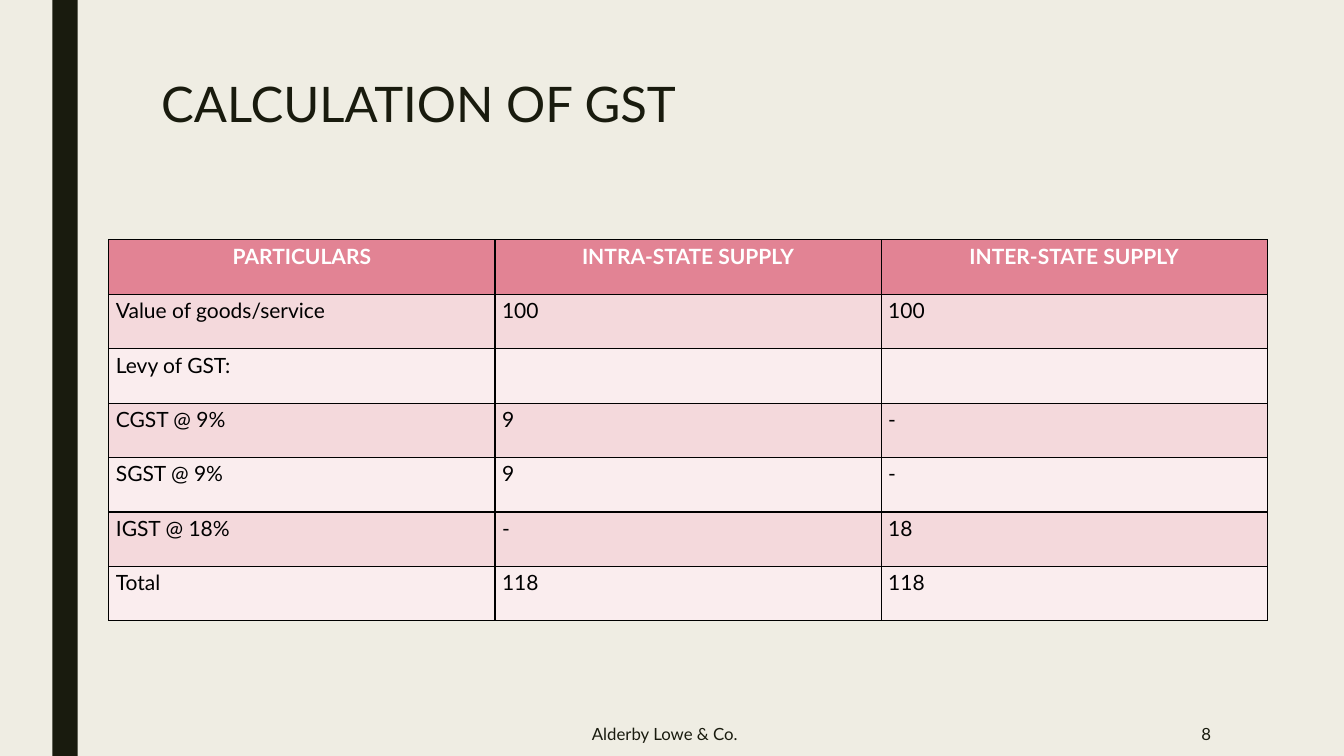
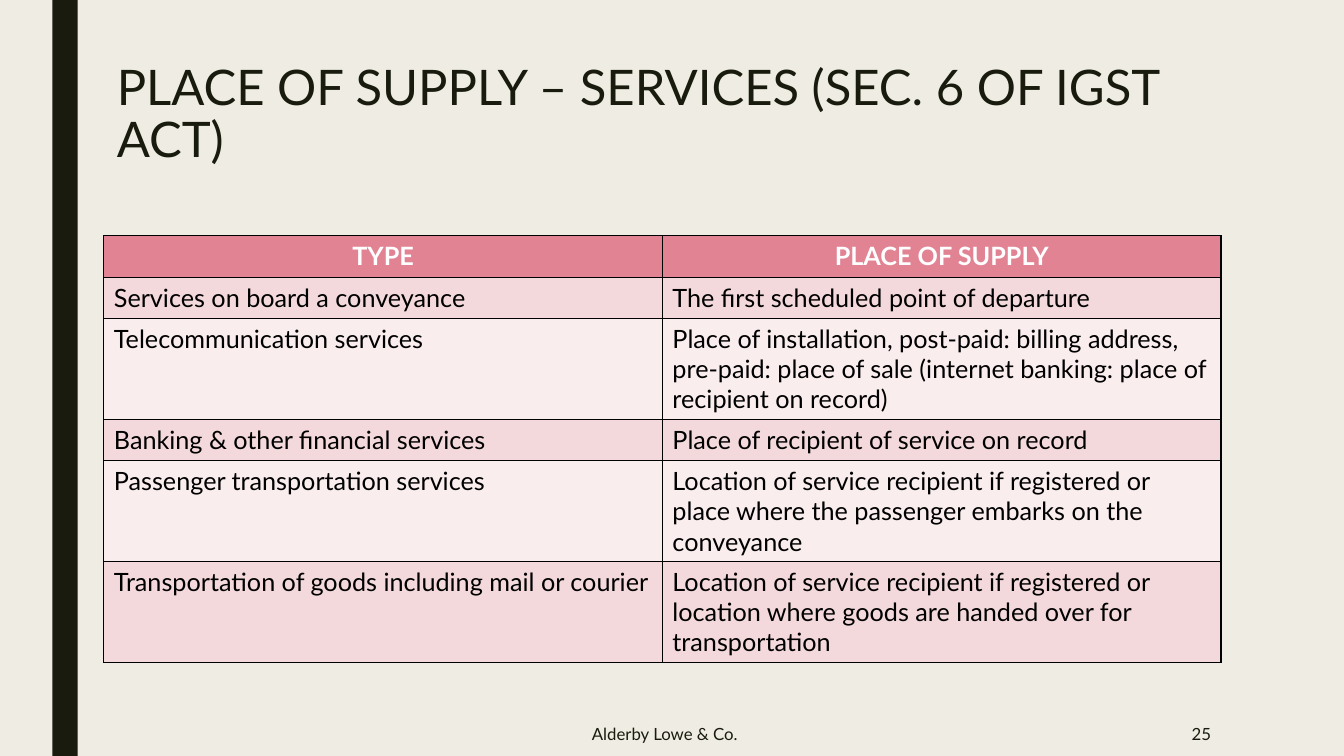
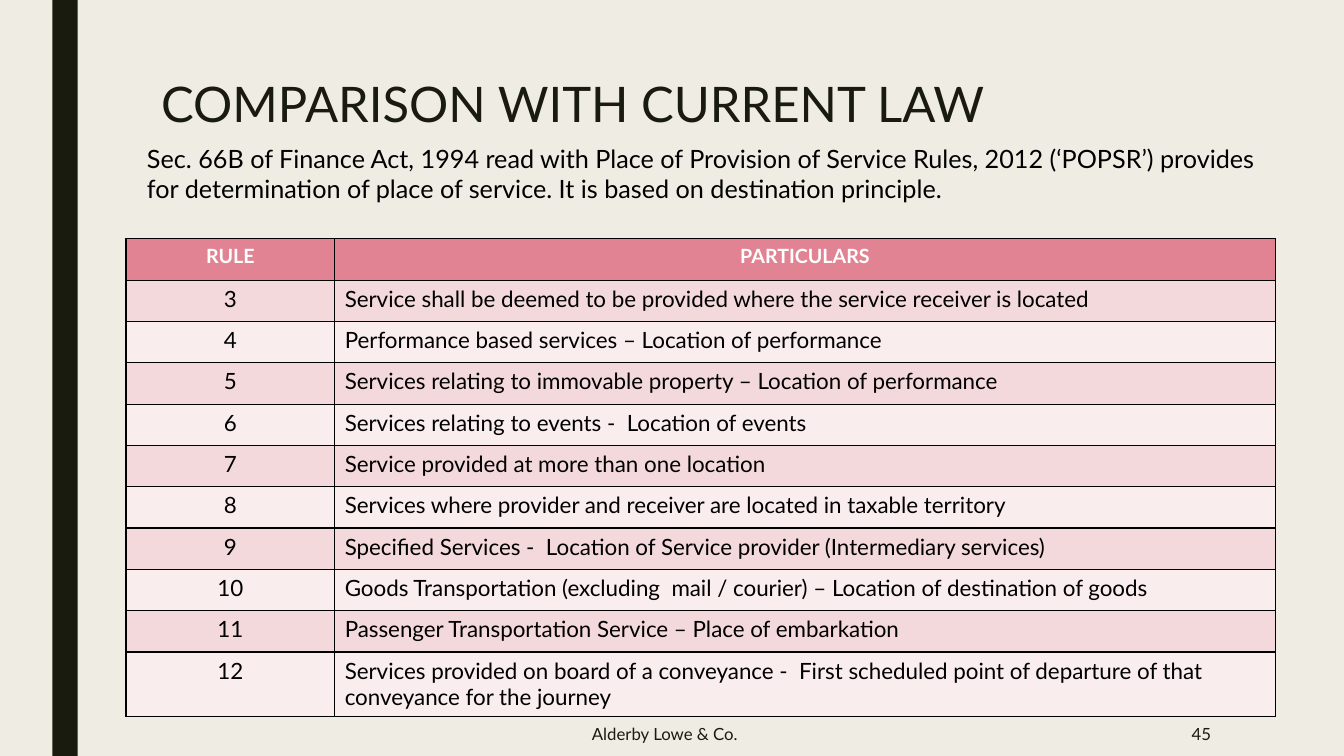
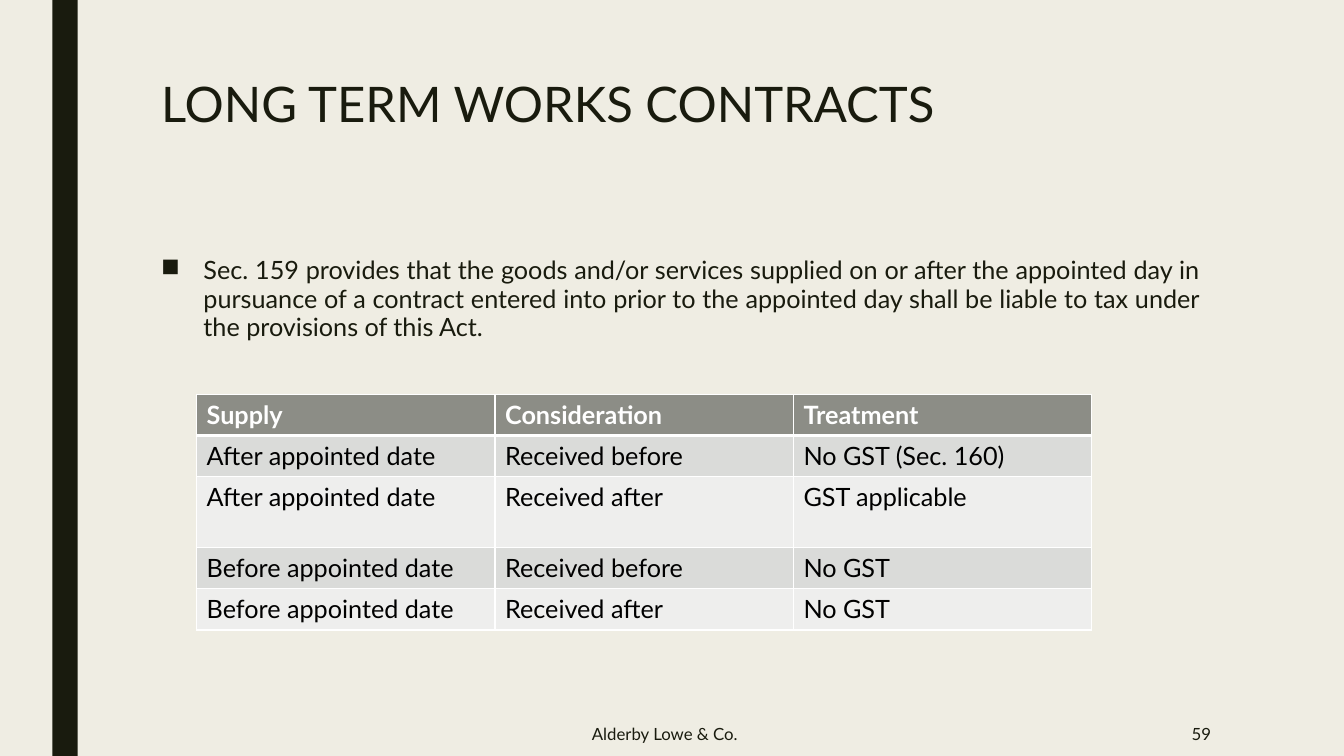
from dataclasses import dataclass

from lxml.etree import SubElement
from pptx import Presentation
from pptx.dml.color import RGBColor
from pptx.enum.shapes import MSO_SHAPE
from pptx.enum.text import MSO_ANCHOR, PP_ALIGN
from pptx.oxml.ns import qn
from pptx.util import Inches, Pt

LEFT, CENTER, RIGHT, JUSTIFY = (
    PP_ALIGN.LEFT, PP_ALIGN.CENTER, PP_ALIGN.RIGHT, PP_ALIGN.JUSTIFY)


@dataclass(frozen=True)
class Theme:
    font: str = "Lato"
    paper: str = "EFEDE3"
    ink: str = "191B0E"
    black: str = "000000"
    white: str = "FFFFFF"
    title_size: int = 35
    body_size: int = 18
    footer_size: int = 12
    footer: str = "Alderby Lowe & Co."


@dataclass(frozen=True)
class TableStyle:
    header: str
    bands: tuple
    border: str
    header_line: int = 1


ROSE = TableStyle("E28394", ("F4D9DC", "FAEDEE"), "000000")
GREY = TableStyle("8C8D86", ("DADBD9", "EEEEED"), "FFFFFF", header_line=3)


class Deck:
    def __init__(self, theme):
        self.theme = theme
        self.prs = Presentation()
        self.prs.slide_width = Inches(13.33)
        self.prs.slide_height = Inches(7.5)
        fill = self.prs.slide_master.background.fill
        fill.solid()
        fill.fore_color.rgb = RGBColor.from_string(theme.paper)

    def slide(self, title, number, title_box=(1.5, 0.75, 10.5, 1.62)):
        """Start a slide with its side band, title and footer."""
        t = self.theme
        self.s = self.prs.slides.add_slide(self.prs.slide_layouts[6])
        band = self.s.shapes.add_shape(
            MSO_SHAPE.RECTANGLE, Inches(0.52), 0, Inches(0.25), self.prs.slide_height)
        band.shadow.inherit = False
        band.fill.solid()
        band.fill.fore_color.rgb = RGBColor.from_string(t.ink)
        band.line.fill.background()

        self.text(title, title_box, t.title_size, t.ink, spacing=0.89)
        for text, box, align in ((t.footer, (3.16, 7.06, 6.87, 0.44), CENTER),
                                 (str(number), (10.36, 7.06, 1.75, 0.44), RIGHT)):
            self.text(text, box, t.footer_size, t.ink, align, anchor=MSO_ANCHOR.MIDDLE)

    def format(self, p, size, color, align=LEFT, spacing=None, bold=False):
        p.alignment = align
        if spacing:
            p.line_spacing = spacing
        for r in p.runs:
            r.font.name = self.theme.font
            r.font.size = Pt(size)
            r.font.bold = bold
            r.font.color.rgb = RGBColor.from_string(color)

    def text(self, text, box, size, color, align=LEFT, spacing=None,
             anchor=MSO_ANCHOR.TOP):
        sp = self.s.shapes.add_textbox(*map(Inches, box))
        tf = sp.text_frame
        tf.word_wrap = True
        tf.vertical_anchor = anchor
        tf.text = text
        p = tf.paragraphs[0]
        self.format(p, size, color, align, spacing)
        return p

    def bullet(self, text, box):
        p = self.text(text, box, self.theme.body_size, self.theme.ink, JUSTIFY, 0.94)
        p.space_before, p.space_after = Pt(10), Pt(2)
        pPr = p._p.get_or_add_pPr()
        pPr.set("marL", str(Inches(0.42)))
        pPr.set("indent", str(-Inches(0.42)))
        SubElement(pPr, qn("a:buChar"), char="■")

    def borders(self, cell, color, widths):
        tcPr = cell._tc.get_or_add_tcPr()
        for side, width in zip("LRTB", widths):
            ln = SubElement(tcPr, qn(f"a:ln{side}"), w=str(Pt(width)))
            fill = SubElement(ln, qn("a:solidFill"))
            SubElement(fill, qn("a:srgbClr"), val=color)

    def table(self, rows, at, cols, heights, style=ROSE, size=18, header_size=None,
              header_align=CENTER, aligns=None, spacing=None, insets=None):
        """Draw a table whose first row is the header."""
        t = self.theme
        aligns = aligns or [LEFT] * len(cols)
        frame = self.s.shapes.add_table(
            len(rows), len(cols), *map(Inches, (*at, sum(cols), sum(heights))))
        tbl = frame.table
        for column, width in zip(tbl.columns, cols):
            column.width = Inches(width)
        for i, (row, height) in enumerate(zip(rows, heights)):
            tbl.rows[i].height = Inches(height)
            header = i == 0
            top = style.header_line if i == 1 else 1
            bottom = style.header_line if header else 1
            for j, text in enumerate(row):
                cell = tbl.cell(i, j)
                self.borders(cell, style.border, (1, 1, top, bottom))
                cell.fill.solid()
                cell.fill.fore_color.rgb = RGBColor.from_string(
                    style.header if header else style.bands[(i - 1) % 2])
                if insets:
                    cell.margin_left = cell.margin_right = Inches(insets[0])
                    cell.margin_top = cell.margin_bottom = Inches(insets[1])
                if not text:
                    continue
                cell.text_frame.text = text
                self.format(cell.text_frame.paragraphs[0],
                            (header_size or size) if header else size,
                            t.white if header else t.black,
                            header_align if header else aligns[j],
                            spacing, bold=header)


def main():
    theme = Theme()
    deck = Deck(theme)
    line = 0.41  # height of a one-line row

    # Calculation of GST
    deck.slide("CALCULATION OF GST", 8)
    rows = [
        ("PARTICULARS", "INTRA-STATE SUPPLY", "INTER-STATE SUPPLY"),
        ("Value of goods/service", "100", "100"),
        ("Levy of GST:", "", ""),
        ("CGST @ 9%", "9", "-"),
        ("SGST @ 9%", "9", "-"),
        ("IGST @ 18%", "-", "18"),
        ("Total", "118", "118"),
    ]
    deck.table(rows, (1.08, 2.38), [3.83] * 3, [0.54] * len(rows), size=15,
               aligns=[JUSTIFY] * 3, spacing=1.15, insets=(0.07, 0))

    # Place of supply
    deck.slide("PLACE OF SUPPLY – SERVICES (SEC. 6 OF IGST ACT)", 25,
               (1.06, 0.58, 11.08, 1.59))
    rows = [
        ("TYPE", "PLACE OF SUPPLY"),
        ("Services on board a conveyance", "The first scheduled point of departure"),
        ("Telecommunication services",
         "Place of installation, post-paid: billing address, pre-paid: place of sale "
         "(internet banking: place of recipient on record)"),
        ("Banking & other financial services", "Place of recipient of service on record"),
        ("Passenger transportation services",
         "Location of service recipient if registered or place where the passenger "
         "embarks on the conveyance"),
        ("Transportation of goods including mail or courier",
         "Location of service recipient if registered or location where goods are "
         "handed over for transportation"),
    ]
    deck.table(rows, (1.03, 2.34), [5.54] * 2, [line, line, 1, line, 1, 1])

    # Comparison with current law
    deck.slide("COMPARISON WITH CURRENT LAW", 45)
    rules = [
        "Service shall be deemed to be provided where the service receiver is located",
        "Performance based services – Location of performance",
        "Services relating to immovable property – Location of performance",
        "Services relating to events -  Location of events",
        "Service provided at more than one location",
        "Services where provider and receiver are located in taxable territory",
        "Specified Services -  Location of Service provider (Intermediary services)",
        "Goods Transportation (excluding  mail / courier) – Location of destination of goods",
        "Passenger Transportation Service – Place of embarkation",
        "Services provided on board of a conveyance -  First scheduled point of departure "
        "of that conveyance for the journey",
    ]
    rows = [("RULE", "PARTICULARS"),
            *((str(n), rule) for n, rule in enumerate(rules, start=3))]
    deck.table(rows, (1.25, 2.37), [2.07, 9.33], [line] * len(rules) + [0.64],
               size=16, header_size=14, aligns=[CENTER, LEFT])
    deck.text("Sec. 66B of Finance Act, 1994 read with Place of Provision of Service Rules, "
              "2012 (‘POPSR’) provides for determination of place of service. It is based on "
              "destination principle.",
              (1.36, 1.37, 11.43, 0.71), theme.body_size, theme.black)

    # Long term works contracts
    deck.slide("LONG TERM WORKS CONTRACTS", 59)
    deck.bullet("Sec. 159 provides that the goods and/or services supplied on or after the "
                "appointed day in pursuance of a contract entered into prior to the appointed "
                "day shall be liable to tax under the provisions of this Act.",
                (1.5, 2.5, 10.5, 3.92))
    rows = [
        ("Supply", "Consideration", "Treatment"),
        ("After appointed date", "Received before", "No GST (Sec. 160)"),
        ("After appointed date", "Received after", "GST applicable"),
        ("Before appointed date", "Received before", "No GST"),
        ("Before appointed date", "Received after", "No GST"),
    ]
    deck.table(rows, (1.95, 3.91), [2.96] * 3, [line, line, 0.7, line, line],
               style=GREY, header_align=LEFT)

    deck.prs.save("out.pptx")


if __name__ == "__main__":
    main()
